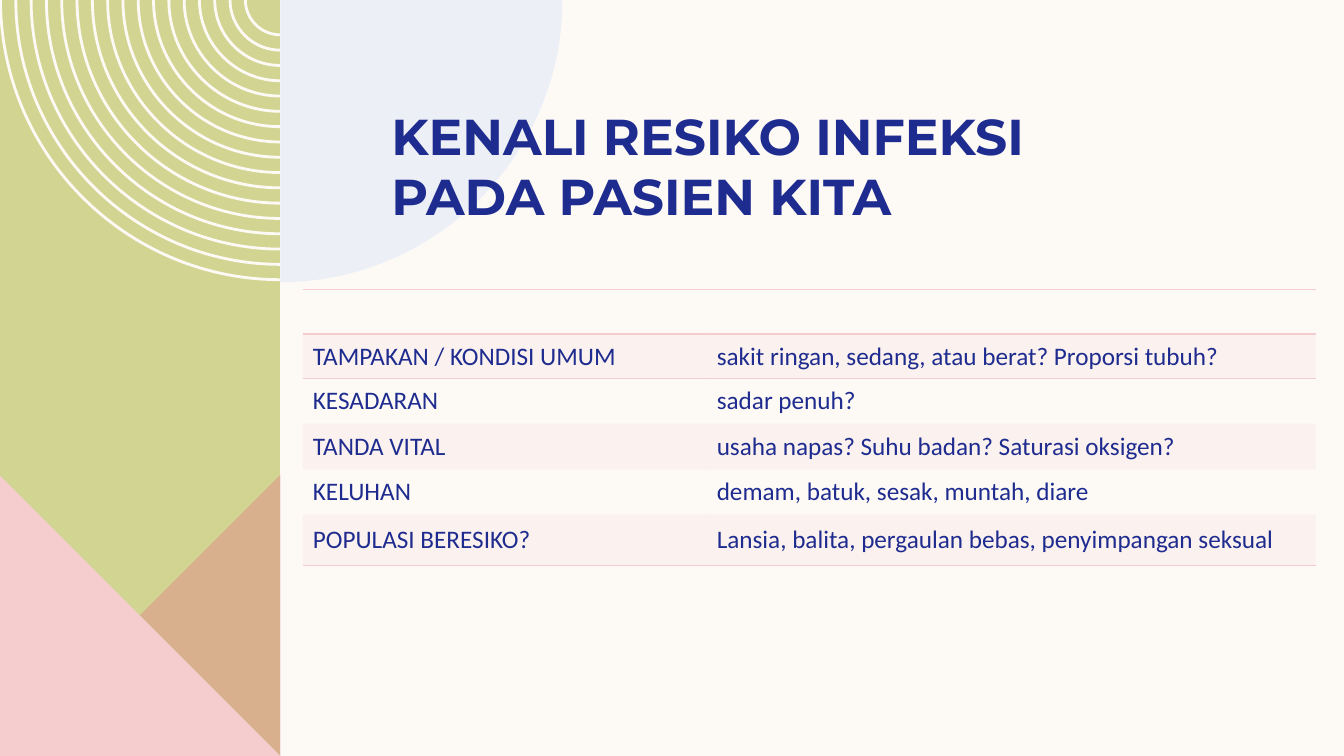
from lxml import etree
from pptx import Presentation
from pptx.dml.color import RGBColor
from pptx.enum.text import MSO_ANCHOR
from pptx.oxml.ns import qn
from pptx.util import Pt

MIDDLE, BOTTOM = MSO_ANCHOR.MIDDLE, MSO_ANCHOR.BOTTOM

CREAM = RGBColor(0xFD, 0xFA, 0xF6)
GREEN = RGBColor(0xD2, 0xD5, 0x92)
PINK = RGBColor(0xF5, 0xCD, 0xCE)
ROSE = RGBColor(0xDE, 0x8C, 0x8C)
PALE_BLUE = RGBColor(0xDD, 0xE7, 0xF6)
NAVY = RGBColor(0x1F, 0x2C, 0x8F)

SLIDE_WIDTH, SLIDE_HEIGHT = 960, 540
PANEL_LEFT, PANEL_RIGHT = -0.6, 200.2
ARC_HANDLE = 0.55
NO_STYLE = "{2D5ABB26-0587-4C30-8999-92F81FD0307C}"

TITLE_LINES = ["KENALI RESIKO INFEKSI", "PADA PASIEN KITA"]
RISK_ROWS = [
    ("", ""),
    ("TAMPAKAN / KONDISI UMUM", "sakit ringan, sedang, atau berat? Proporsi tubuh?"),
    ("KESADARAN", "sadar penuh?"),
    ("TANDA VITAL", "usaha napas? Suhu badan? Saturasi oksigen?"),
    ("KELUHAN", "demam, batuk, sesak, muntah, diare"),
    ("POPULASI BERESIKO?", "Lansia, balita, pergaulan bebas, penyimpangan seksual"),
]
ROW_HEIGHTS = [32, 32, 32, 33, 32, 36.5]
COLUMN_WIDTHS = [288.5, 435]


def set_fill(fill, color, opacity=100):
    """Fill with a solid colour at the given opacity in percent."""
    fill.solid()
    fill.fore_color.rgb = color
    if opacity < 100:
        color_element = fill._xPr.find(qn("a:solidFill"))[0]
        etree.SubElement(color_element, qn("a:alpha"), val=str(opacity * 1000))


def add_outline(page, contours, color, opacity=100):
    """Draw closed contours, each a list of points, as one filled shape."""
    contours = [[(Pt(x), Pt(y)) for x, y in contour] for contour in contours]
    builder = page.shapes.build_freeform(*contours[0][0], scale=1.0)
    for index, contour in enumerate(contours):
        if index:
            builder.move_to(*contour[0])
        builder.add_line_segments(contour[1:], close=True)
    shape = builder.convert_to_shape()
    shape.shadow.inherit = False
    shape.line.fill.background()
    set_fill(shape.fill, color, opacity)
    return shape


def curve_arcs(shape):
    """Turn each contour's four-point arcs from straight lines into Bezier curves."""
    for start in list(shape._element.iter(qn("a:moveTo"))):
        lines = []
        for element in start.itersiblings():
            if element.tag != qn("a:lnTo"):
                break
            lines.append(element)
        for first in range(0, len(lines) - 2, 4):
            arc = lines[first:first + 3]
            curve = etree.Element(qn("a:cubicBezTo"))
            arc[0].addprevious(curve)
            for line in arc:
                curve.append(line[0])
                line.getparent().remove(line)


def quarter_arc(center_x, top, radius, side):
    """Bezier points from the horizontal radius (side -1 left, 1 right) to the bottom."""
    handle = radius * ARC_HANDLE
    edge, bottom = center_x + side * radius, top + radius
    return [(edge, top), (edge, top + handle),
            (center_x + side * handle, bottom), (center_x, bottom)]


def add_rings(page, center_x, top, outer_radius, count=17, gap=10.93, thickness=2):
    contours = []
    for index in range(count):
        radius = outer_radius - index * gap
        outer = quarter_arc(center_x, top, radius, -1)
        inner = quarter_arc(center_x, top, radius - thickness, -1)
        contours.append(outer + inner[::-1])
    curve_arcs(add_outline(page, contours, CREAM))


def add_side_panel(page, left, top, right, bottom):
    width = right - left
    corner_top = bottom - width
    add_outline(page, [[(left, top), (right, top), (right, bottom), (left, bottom)]], GREEN)
    add_rings(page, right, top, width)
    add_outline(page, [[(right, corner_top), (right, bottom), (left, bottom)]], ROSE, 50)
    add_outline(page, [[(left, corner_top), (right, bottom), (left, bottom)]], PINK)


def add_quarter_disc(page, left, top, radius):
    contour = quarter_arc(left, top, radius, 1) + [(left, top)]
    curve_arcs(add_outline(page, [contour], PALE_BLUE, 50))


def style_run(run, font_name, size, bold=False):
    run.font.name = font_name
    run.font.size = Pt(size)
    run.font.bold = bold
    run.font.color.rgb = NAVY


def add_title(page, left, top, width, height):
    box = page.shapes.add_textbox(Pt(left), Pt(top), Pt(width), Pt(height))
    frame = box.text_frame
    frame.word_wrap = True
    frame.vertical_anchor = BOTTOM
    frame.margin_top = frame.margin_bottom = 0
    para = frame.paragraphs[0]
    for index, line in enumerate(TITLE_LINES):
        if index:
            para.add_line_break()
        span = para.add_run()
        span.text = line
        style_run(span, "Montserrat", 36, bold=True)


def set_borders(cell, sides):
    """Add one-point pink borders; sides are tags in the order lnT, lnB."""
    properties = cell._tc.get_or_add_tcPr()
    for index, side in enumerate(sides):
        border = etree.Element(qn("a:" + side), w=str(Pt(1)))
        solid = etree.SubElement(border, qn("a:solidFill"))
        etree.SubElement(solid, qn("a:srgbClr"), val=str(PINK))
        properties.insert(index, border)


def fill_cell(cell, text, shaded):
    cell.vertical_anchor = MIDDLE
    if shaded:
        set_fill(cell.fill, PINK, 20)
    else:
        cell.fill.background()
    if text:
        span = cell.text_frame.paragraphs[0].add_run()
        span.text = text
        style_run(span, "Calibri", 18)


def add_risk_table(page, left, top):
    frame = page.shapes.add_table(
        len(RISK_ROWS), len(COLUMN_WIDTHS), Pt(left), Pt(top),
        Pt(sum(COLUMN_WIDTHS)), Pt(sum(ROW_HEIGHTS)))
    table = frame.table
    table.first_row = table.horz_banding = False
    table._tbl.tblPr.find(qn("a:tableStyleId")).text = NO_STYLE
    for column, width in zip(table.columns, COLUMN_WIDTHS):
        column.width = Pt(width)
    borders = {0: ["lnT", "lnB"], 1: ["lnT"], len(RISK_ROWS) - 1: ["lnB"]}
    for row_index, (texts, height) in enumerate(zip(RISK_ROWS, ROW_HEIGHTS)):
        table.rows[row_index].height = Pt(height)
        for column_index, text in enumerate(texts):
            cell = table.cell(row_index, column_index)
            fill_cell(cell, text, shaded=row_index % 2 == 1)
            set_borders(cell, borders.get(row_index, []))


def main():
    deck = Presentation()
    deck.slide_width, deck.slide_height = Pt(SLIDE_WIDTH), Pt(SLIDE_HEIGHT)
    page = deck.slides.add_slide(deck.slide_layouts[6])
    set_fill(page.background.fill, CREAM)
    add_side_panel(page, PANEL_LEFT, 0, PANEL_RIGHT, SLIDE_HEIGHT)
    add_quarter_disc(page, PANEL_RIGHT, 0, 201.6)
    add_title(page, 272.5, 54.7, 627, 106.5)
    add_risk_table(page, 216.3, 206.6)
    deck.save("out.pptx")


if __name__ == "__main__":
    main()
